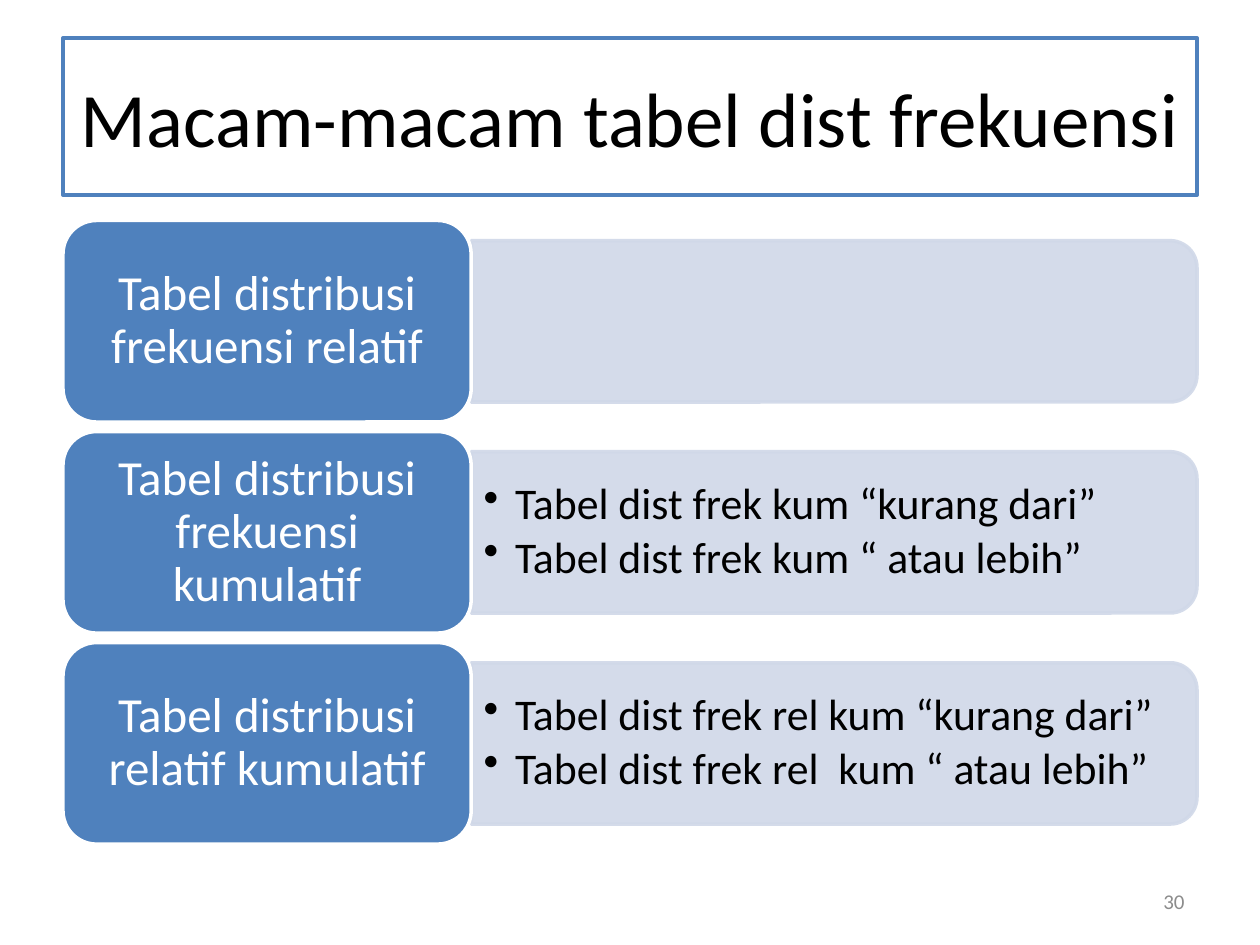
from dataclasses import dataclass

import pptx
import pptx.dml.color
import pptx.enum.shapes
import pptx.enum.text
import pptx.oxml.ns
import pptx.util
from lxml import etree

Pt = pptx.util.Pt
Align = pptx.enum.text.PP_ALIGN
Shape = pptx.enum.shapes.MSO_SHAPE

FONT = "Calibri"
BLUE, PALE, WHITE, BLACK, GREY = "4F81BD", "D0D8E8", "FFFFFF", "000000", "8C8C8C"
LEFT, FIRST_TOP, ROW_PITCH = 36, 126, 120.6
LABEL_WIDTH, LABEL_HEIGHT = 233.3, 115.2
PANEL_WIDTH, PANEL_HEIGHT = 414.7, 92.2
DETAIL_WIDTH, DETAIL_HEIGHT = 410.4, 82.8


@dataclass
class Row:
    label: str
    details: tuple[str, ...] = ()


ROWS = (
    Row("Tabel distribusi frekuensi relatif"),
    Row("Tabel distribusi frekuensi kumulatif",
        ("Tabel dist frek kum “kurang dari”", "Tabel dist frek kum “ atau lebih”")),
    Row("Tabel distribusi relatif kumulatif",
        ("Tabel dist frek rel kum “kurang dari”", "Tabel dist frek rel  kum “ atau lebih”")),
)


def color(value: str):
    return pptx.dml.color.RGBColor.from_string(value)


def paint(shape, fill: str, line: str) -> None:
    shape.shadow.inherit = False
    shape.fill.solid()
    shape.fill.fore_color.rgb = color(fill)
    shape.line.color.rgb = color(line)
    shape.line.width = Pt(2)


def set_alpha(shape, percent: int) -> None:
    """Make the fill and the line of a painted shape translucent."""
    for rgb in shape._element.spPr.iter(pptx.oxml.ns.qn("a:srgbClr")):
        etree.SubElement(rgb, pptx.oxml.ns.qn("a:alpha"), val=str(percent * 1000))


def prepare_frame(shape, side: float, edge: float):
    frame = shape.text_frame
    frame.word_wrap = True
    frame.vertical_anchor = pptx.enum.text.MSO_ANCHOR.MIDDLE
    frame.margin_left = frame.margin_right = Pt(side)
    frame.margin_top = frame.margin_bottom = Pt(edge)
    return frame


def style(para, size: float, ink: str, align) -> None:
    para.alignment = align
    for span in para.runs:
        span.font.name = FONT
        span.font.size = Pt(size)
        span.font.color.rgb = color(ink)


def add_bullet(para, indent: float) -> None:
    properties = para._p.get_or_add_pPr()
    properties.set("marL", str(Pt(indent)))
    properties.set("indent", str(-Pt(indent)))
    etree.SubElement(properties, pptx.oxml.ns.qn("a:buChar"), char="•")


def add_panel(page, middle: float) -> None:
    """Draw the pale bar: a shape with two round corners, turned to the right."""
    center = LEFT + LABEL_WIDTH + PANEL_WIDTH / 2
    panel = page.shapes.add_shape(
        Shape.ROUND_2_SAME_RECTANGLE, Pt(center - PANEL_HEIGHT / 2),
        Pt(middle - PANEL_WIDTH / 2), Pt(PANEL_HEIGHT), Pt(PANEL_WIDTH))
    panel.rotation = 90
    paint(panel, PALE, PALE)
    set_alpha(panel, 90)


def add_details(page, details: tuple[str, ...], middle: float) -> None:
    box = page.shapes.add_textbox(
        Pt(LEFT + LABEL_WIDTH), Pt(middle - DETAIL_HEIGHT / 2),
        Pt(DETAIL_WIDTH), Pt(DETAIL_HEIGHT))
    frame = prepare_frame(box, 7.2, 3.6)
    frame.text = "\n".join(details)
    for para in frame.paragraphs:
        add_bullet(para, 18)
        para.line_spacing = 0.9
        para.space_after = Pt(3.5)
        style(para, 25, BLACK, Align.LEFT)


def add_label(page, text: str, top: float) -> None:
    label = page.shapes.add_shape(
        Shape.ROUNDED_RECTANGLE, Pt(LEFT), Pt(top), Pt(LABEL_WIDTH), Pt(LABEL_HEIGHT))
    paint(label, BLUE, WHITE)
    frame = prepare_frame(label, 8.4, 4.2)
    frame.text = text
    frame.paragraphs[0].line_spacing = 0.9
    style(frame.paragraphs[0], 28, WHITE, Align.CENTER)


def add_row(page, row: Row, top: float) -> None:
    middle = top + LABEL_HEIGHT / 2
    add_panel(page, middle)
    if row.details:
        add_details(page, row.details, middle)
    add_label(page, row.label, top)


def set_title(page, text: str) -> None:
    title = page.shapes.title
    title.left, title.top, title.width, title.height = Pt(LEFT), Pt(21.6), Pt(648), Pt(90)
    title.line.color.rgb = color(BLUE)
    title.line.width = Pt(2)
    frame = prepare_frame(title, 7.2, 3.6)
    frame.text = text
    style(frame.paragraphs[0], 44, BLACK, Align.CENTER)


def add_page_number(page, number: str) -> None:
    box = page.shapes.add_textbox(Pt(516), Pt(500.5), Pt(168), Pt(28.8))
    frame = prepare_frame(box, 7.2, 3.6)
    frame.text = number
    style(frame.paragraphs[0], 12, GREY, Align.RIGHT)


def main() -> None:
    deck = pptx.Presentation()
    deck.slide_width, deck.slide_height = Pt(720), Pt(540)
    page = deck.slides.add_slide(deck.slide_layouts[5])
    set_title(page, "Macam-macam tabel dist frekuensi")
    for index, row in enumerate(ROWS):
        add_row(page, row, FIRST_TOP + index * ROW_PITCH)
    add_page_number(page, "30")
    deck.save("out.pptx")


if __name__ == "__main__":
    main()
